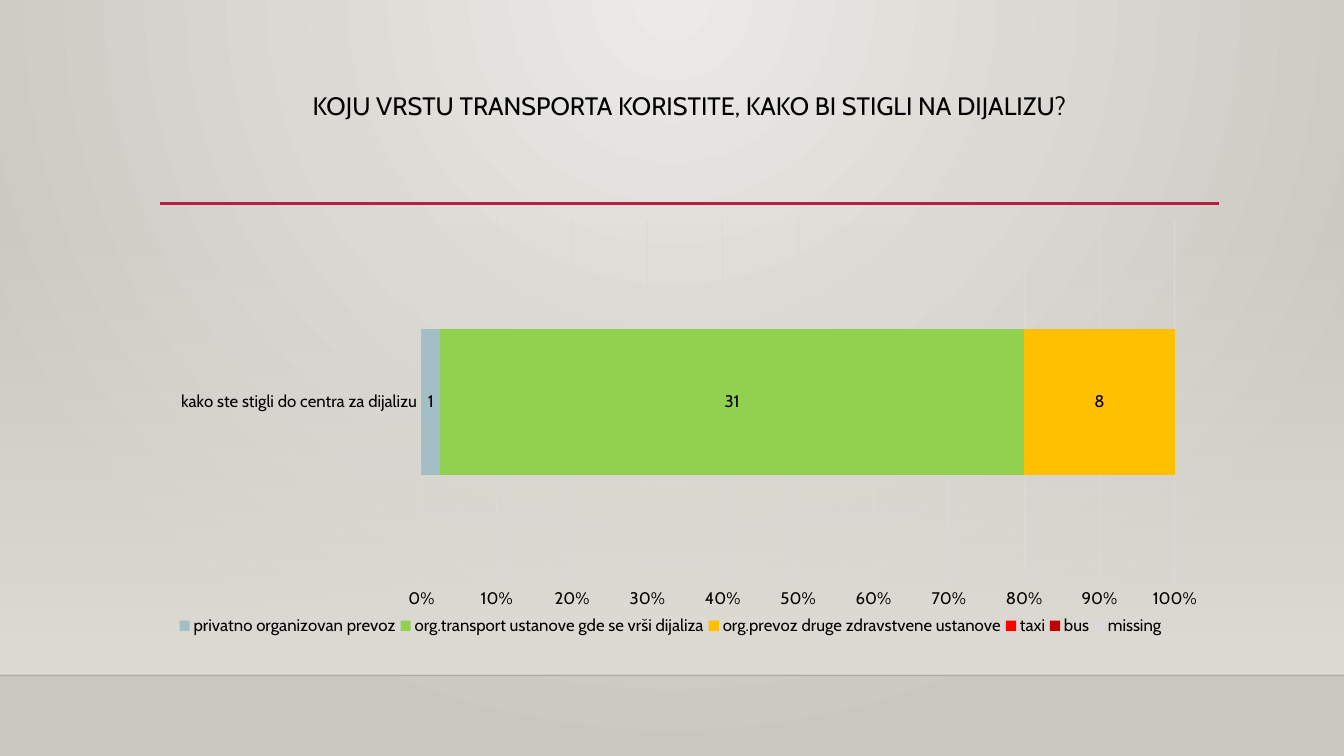
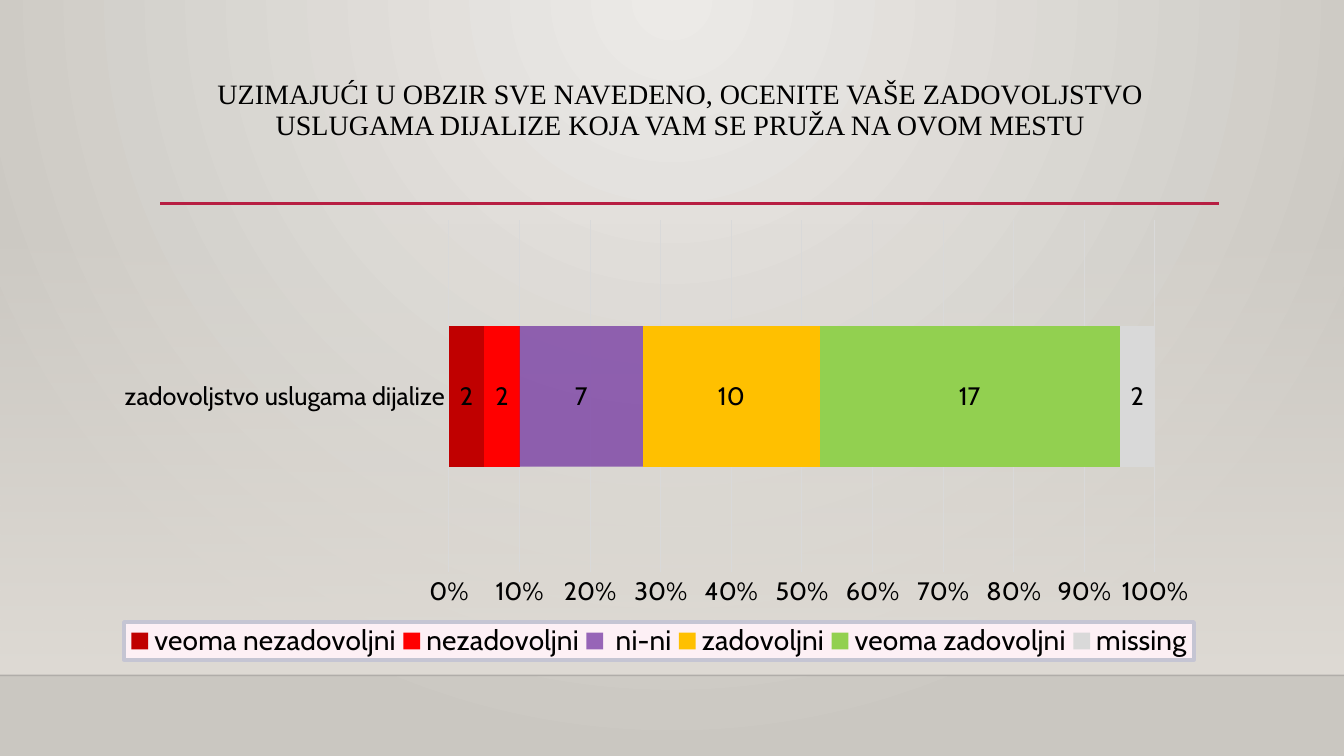
import pptx
import pptx.util
import pptx.chart.data
import pptx.dml.color
import pptx.enum.chart
import pptx.enum.shapes
import pptx.enum.text
import pptx.oxml
import pptx.oxml.ns
import pptx.oxml.xmlchemy

Pt = pptx.util.Pt
RGB = pptx.dml.color.RGBColor
qn = pptx.oxml.ns.qn
make = pptx.oxml.xmlchemy.OxmlElement

# Colours
BLACK = RGB(0x00, 0x00, 0x00)
EDGE = RGB(0x00, 0x00, 0x01)
LIGHT = RGB(0xEC, 0xEA, 0xE7)
DARK = RGB(0xCA, 0xC7, 0xC1)
HAZE = RGB(0xDF, 0xDB, 0xD5)
CRIMSON = RGB(0xB7, 0x1E, 0x42)
GREY = RGB(0xD9, 0xD9, 0xD9)
BLUE = RGB(0xA4, 0xBE, 0xC6)
GREEN = RGB(0x92, 0xD0, 0x50)
AMBER = RGB(0xFF, 0xC0, 0x00)
RED = RGB(0xFF, 0x00, 0x00)
MAROON = RGB(0xC0, 0x00, 0x00)
PURPLE = RGB(0x70, 0x30, 0xA0)
PINK = RGB(0xFD, 0xF0, 0xF5)
LILAC = RGB(0xC5, 0xC5, 0xD3)


def style(font, size, name="Cabin"):
    font.size = Pt(size)
    font.name = name
    font.bold = False
    font.color.rgb = BLACK


def fade(root, color, share):
    """Give the first use of a colour below root an opacity in percent."""
    for node in root.iter(qn("a:srgbClr")):
        if node.get("val") == str(color):
            alpha = make("a:alpha")
            alpha.set("val", str(share * 1000))
            node.append(alpha)
            return


deck = pptx.Presentation()
deck.slide_width, deck.slide_height = Pt(960), Pt(540)
layout = deck.slide_layouts[5]

# Shared background: round gradient from the top centre
fill = layout.background.fill
fill.gradient()
for stop, color in zip(fill.gradient_stops, (LIGHT, DARK)):
    stop.color.rgb = color
lin = next(layout.element.iter(qn("a:lin")))
glow = make("a:path")
glow.set("path", "circle")
rect = make("a:fillToRect")
for side, value in zip("ltrb", (43000, 0, 43000, 100000)):
    rect.set(side, str(value))
glow.append(rect)
lin.getparent().replace(lin, glow)

# Content of each slide; area, plot and key box are left, top, width, height
pages = [
    dict(
        title="KOJU VRSTU TRANSPORTA KORISTITE, KAKO BI STIGLI NA DIJALIZU?",
        face="Cabin", size=18, head=(114.5, 63.4, 756, 82.8),
        area=(114.5, 150.5, 756, 315.4), plot=(301, 156.8, 538.2, 260.7),
        row=(125, 437, 708, 20), text=12, key=12, boxed=False,
        label="kako ste stigli do centra za dijalizu",
        bars=[("privatno organizovan prevoz", 1, BLUE),
              ("org.transport ustanove gde se vrši dijaliza", 31, GREEN),
              ("org.prevoz druge zdravstvene ustanove", 8, AMBER),
              ("taxi", None, RED),
              ("bus", None, MAROON),
              ("missing", None, GREY)]),
    dict(
        title="UZIMAJUĆI U OBZIR SVE NAVEDENO, OCENITE VAŠE ZADOVOLJSTVO "
              "USLUGAMA DIJALIZE KOJA VAM SE PRUŽA NA OVOM MESTU",
        face="Times New Roman", size=20, head=(108, 54, 756, 66.2),
        area=(72.7, 151.2, 791.3, 326.9), plot=(320.7, 157.5, 504.3, 251.4),
        row=(88.6, 444.3, 764.3, 27.1), text=18, key=20, boxed=True,
        label="zadovoljstvo uslugama dijalize",
        bars=[("veoma nezadovoljni", 2, MAROON),
              ("nezadovoljni", 2, RED),
              (" ni-ni", 7, PURPLE),
              ("zadovoljni", 10, AMBER),
              ("veoma zadovoljni", 17, GREEN),
              ("missing", 2, GREY)]),
]
slides = [deck.slides.add_slide(layout) for page in pages]

# Shared haze and rules: drawn once, then moved to the layout
shapes = slides[0].shapes
haze = shapes.add_shape(pptx.enum.shapes.MSO_SHAPE.RECTANGLE,
                        0, Pt(159.1), Pt(960), Pt(323.3))
haze.shadow.inherit = False
haze.line.fill.background()
haze.fill.gradient()
haze.fill.gradient_angle = 270
for stop in haze.fill.gradient_stops:
    stop.color.rgb = HAZE
fade(haze.element, HAZE, 0)
layout.shapes.element.append(haze.element)

for left, right, y, color, width in ((0, 960, 482.4, EDGE, 1),
                                     (114.5, 870.8, 145.4, CRIMSON, 2.5)):
    rule = shapes.add_connector(pptx.enum.shapes.MSO_CONNECTOR.STRAIGHT,
                                Pt(left), Pt(y), Pt(right), Pt(y))
    rule.line.color.rgb = color
    rule.line.width = Pt(width)
    rule.element.spPr.append(make("a:effectLst"))
    fade(rule.element, EDGE, 20)
    layout.shapes.element.append(rule.element)

for slide, page in zip(slides, pages):
    # Title
    title = slide.shapes.title
    title.left, title.top, title.width, title.height = map(Pt, page["head"])
    frame = title.text_frame
    frame.word_wrap = True
    frame.auto_size = pptx.enum.text.MSO_AUTO_SIZE.NONE
    frame.vertical_anchor = pptx.enum.text.MSO_ANCHOR.TOP
    para = frame.paragraphs[0]
    para.alignment = pptx.enum.text.PP_ALIGN.CENTER
    para.line_spacing = 0.9
    run = para.add_run()
    run.text = page["title"]
    style(run.font, page["size"], page["face"])

    # Chart
    data = pptx.chart.data.CategoryChartData()
    data.categories = [page["label"]]
    for name, value, color in page["bars"]:
        data.add_series(name, [value])
    chart = slide.shapes.add_chart(
        pptx.enum.chart.XL_CHART_TYPE.BAR_STACKED_100,
        *map(Pt, page["area"]), data).chart
    chart.has_title = False
    style(chart.font, page["text"])
    plot = chart.plots[0]
    plot.vary_by_categories = False
    plot.gap_width, plot.overlap = 150, 100
    for series, (name, value, color) in zip(plot.series, page["bars"]):
        series.format.fill.solid()
        series.format.fill.fore_color.rgb = color
        labels = series.data_labels
        labels.show_value = True
        labels.position = pptx.enum.chart.XL_LABEL_POSITION.CENTER
        style(labels.font, page["text"])
    fade(chart.element, PURPLE, 72)

    # Axes
    for axis in (chart.category_axis, chart.value_axis):
        axis.major_tick_mark = pptx.enum.chart.XL_TICK_MARK.NONE
        axis.minor_tick_mark = pptx.enum.chart.XL_TICK_MARK.NONE
        style(axis.tick_labels.font, page["text"])
    chart.category_axis.has_major_gridlines = False
    chart.value_axis.has_major_gridlines = True
    chart.value_axis.format.line.fill.background()
    chart.value_axis.tick_labels.number_format = "0%"
    chart.value_axis.tick_labels.number_format_is_linked = False
    for line in (chart.category_axis.format.line,
                 chart.value_axis.major_gridlines.format.line):
        line.color.rgb = GREY
        line.width = Pt(0.75)

    # Legend
    chart.has_legend = True
    chart.legend.position = pptx.enum.chart.XL_LEGEND_POSITION.BOTTOM
    chart.legend.include_in_layout = False
    style(chart.legend.font, page["key"])
    legend = next(chart.element.iter(qn("c:legend")))
    if page["boxed"]:
        box = pptx.oxml.parse_xml(
            f'<c:spPr {pptx.oxml.ns.nsdecls("c", "a")}>'
            f'<a:solidFill><a:srgbClr val="{PINK}"/></a:solidFill>'
            f'<a:ln w="{Pt(2.5)}"><a:solidFill><a:srgbClr val="{LILAC}"/>'
            '</a:solidFill></a:ln></c:spPr>')
        legend.find(qn("c:txPr")).addprevious(box)

    # Fixed places of plot and legend, as shares of the chart area
    left, top, width, height = page["area"]
    area = next(chart.element.iter(qn("c:plotArea")))
    for part, spot, index in ((area, page["plot"], 0),
                              (legend, page["row"], 1)):
        for old in part.findall(qn("c:layout")):
            part.remove(old)
        x, y, w, h = spot
        parts = [("xMode", "edge"), ("yMode", "edge"),
                 ("x", (x - left) / width), ("y", (y - top) / height),
                 ("w", w / width), ("h", h / height)]
        if part is area:
            parts.insert(0, ("layoutTarget", "inner"))
        place, manual = make("c:layout"), make("c:manualLayout")
        for tag, value in parts:
            item = make(f"c:{tag}")
            item.set("val", str(value))
            manual.append(item)
        place.append(manual)
        part.insert(index, place)

deck.save("out.pptx")
